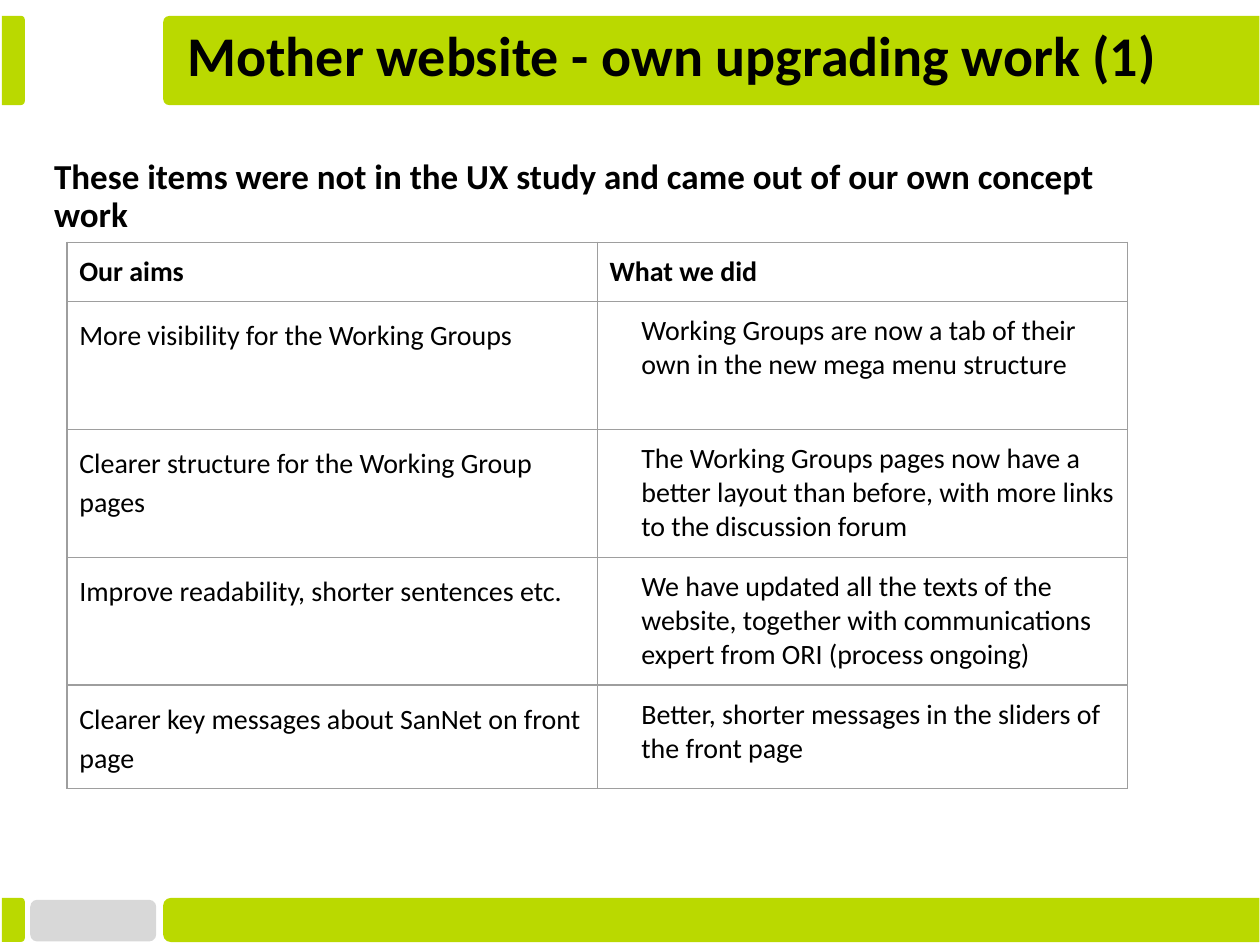
import pptx
import pptx.util
import pptx.dml.color
import pptx.enum.shapes
import pptx.enum.text
import pptx.oxml.ns
import lxml.etree

Cm = pptx.util.Cm
Pt = pptx.util.Pt
RGBColor = pptx.dml.color.RGBColor
Shapes = pptx.enum.shapes.MSO_SHAPE
Anchor = pptx.enum.text.MSO_ANCHOR
qn = pptx.oxml.ns.qn

GREEN = RGBColor(0xBA, 0xD9, 0x00)
GREY = RGBColor(0xD8, 0xD8, 0xD8)
BORDER = RGBColor(0x9E, 0x9E, 0x9E)
BLACK = RGBColor(0x00, 0x00, 0x00)

INSET = Cm(0.25)
MARGINS = {"margin_left": INSET, "margin_right": INSET,
           "margin_top": INSET, "margin_bottom": INSET}
TITLE = {"name": "Calibri", "size": Pt(32), "bold": True}
LEAD = {"name": "Calibri", "size": Pt(20), "bold": True}
HEADER = {"name": "Calibri", "size": Pt(16), "bold": True}
BODY = {"name": "Calibri", "size": Pt(16), "bold": False}

ROWS = [
    ("Our aims", "What we did"),
    ("More visibility for the Working Groups",
     "Working Groups are now a tab of their own in the new mega menu structure"),
    ("Clearer structure for the Working Group pages",
     "The Working Groups pages now have a better layout than before, "
     "with more links to the discussion forum"),
    ("Improve readability, shorter sentences etc.",
     "We have updated all the texts of the website, together with "
     "communications expert from ORI (process ongoing)"),
    ("Clearer key messages about SanNet on front page",
     "Better, shorter messages in the sliders of the front page"),
]
ROW_HEIGHTS = [1.19, 2.58, 2.58, 2.58, 2.08]


def apply(target, values):
    for name, value in values.items():
        setattr(target, name, value)


class SlideBuilder:
    """Holds the style and the current slide."""

    def __init__(self, slide):
        self.slide = slide

    def add_words(self, paragraph, text, style, spacing=None):
        run = paragraph.add_run()
        run.text = text
        apply(run.font, style)
        run.font.color.rgb = BLACK
        if spacing:
            paragraph.line_spacing = spacing

    def block(self, kind, left, top, width, height, color, radius):
        shape = self.slide.shapes.add_shape(
            kind, Cm(left), Cm(top), Cm(width), Cm(height))
        shape.adjustments[0] = radius
        shape.shadow.inherit = False
        shape.fill.solid()
        shape.fill.fore_color.rgb = color
        shape.line.fill.background()
        return shape

    def bar(self, left, top, width, height, rotation, radius):
        """Bar rounded at one end; the place given is that after turning."""
        shift = (width - height) / 2
        shape = self.block(Shapes.ROUND_2_SAME_RECTANGLE, left + shift,
                           top - shift, height, width, GREEN, radius)
        shape.adjustments[1] = 0
        shape.rotation = rotation

    def text(self, left, top, width, height, text, style, anchor):
        box = self.slide.shapes.add_textbox(
            Cm(left), Cm(top), Cm(width), Cm(height))
        frame = box.text_frame
        apply(frame, MARGINS | {"word_wrap": True, "vertical_anchor": anchor})
        self.add_words(frame.paragraphs[0], text, style, 0.9)

    def border(self, cell):
        properties = cell._tc.get_or_add_tcPr()
        for position, side in enumerate(("a:lnL", "a:lnR", "a:lnT", "a:lnB")):
            line = lxml.etree.Element(qn(side), w=str(Pt(0.75)))
            fill = lxml.etree.SubElement(line, qn("a:solidFill"))
            lxml.etree.SubElement(fill, qn("a:srgbClr"), val=str(BORDER))
            properties.insert(position, line)

    def table(self, left, top, column_width, heights, rows):
        columns = len(rows[0])
        table = self.slide.shapes.add_table(
            len(rows), columns, Cm(left), Cm(top),
            Cm(column_width * columns), Cm(sum(heights))).table
        for column in table.columns:
            column.width = Cm(column_width)
        for r, (height, texts) in enumerate(zip(heights, rows)):
            table.rows[r].height = Cm(height)
            for c, text in enumerate(texts):
                cell = table.cell(r, c)
                apply(cell, MARGINS)
                cell.fill.background()
                self.border(cell)
                paragraph = cell.text_frame.paragraphs[0]
                aim = r > 0 and c == 0
                self.add_words(paragraph, text, BODY if r else HEADER,
                               1.15 if aim else None)
                if r > 0 and c == 1:
                    paragraph._p.get_or_add_pPr().set("marL", str(Cm(0.64)))


def main():
    presentation = pptx.Presentation()
    presentation.slide_width = Cm(25.4)
    presentation.slide_height = Cm(19.05)
    builder = SlideBuilder(
        presentation.slides.add_slide(presentation.slide_layouts[6]))

    # Header and footer bands
    builder.block(Shapes.ROUNDED_RECTANGLE, 0.61, 18.14, 2.54, 0.84, GREY, 0.17)
    for top, height, radius in ((0.32, 1.8, 0.07), (18.1, 0.89, 0.17)):
        builder.bar(0.04, top, 0.46, height, 90, 0.17)
        builder.bar(3.29, top, 22.1, height, 270, radius)

    # Title and lead sentence
    builder.text(3.53, 0.36, 23.93, 1.65,
                 "Mother website - own upgrading work (1)", TITLE, Anchor.MIDDLE)
    builder.text(0.84, 2.97, 21.92, 1.93,
                 "These items were not in the UX study and came out of our own "
                 "concept work", LEAD, Anchor.TOP)

    # Aims and results
    builder.table(1.35, 4.88, 10.69, ROW_HEIGHTS, ROWS)

    presentation.save("out.pptx")


if __name__ == "__main__":
    main()
